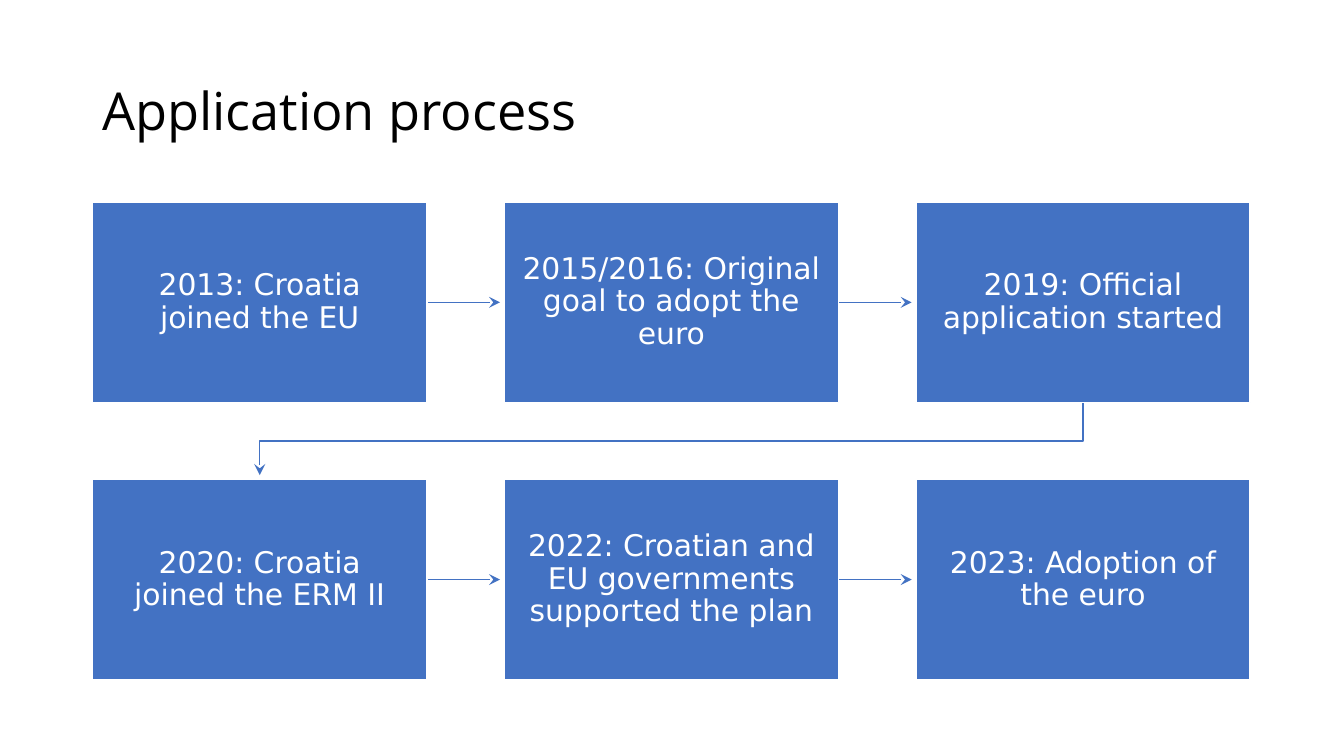
from lxml import etree
from pptx import Presentation
from pptx.dml.color import RGBColor
from pptx.enum.shapes import MSO_CONNECTOR, MSO_SHAPE
from pptx.enum.text import MSO_ANCHOR, PP_ALIGN
from pptx.oxml.ns import qn
from pptx.util import Cm, Pt

RECTANGLE = MSO_SHAPE.RECTANGLE
STRAIGHT = MSO_CONNECTOR.STRAIGHT
MIDDLE = MSO_ANCHOR.MIDDLE
LEFT, CENTER = PP_ALIGN.LEFT, PP_ALIGN.CENTER

# Content
TITLE = "Application process"
STEPS = [
    "2013: Croatia joined the EU",
    "2015/2016: Original goal to adopt the euro",
    "2019: Official application started",
    "2020: Croatia joined the ERM II",
    "2022: Croatian and EU governments supported the plan",
    "2023: Adoption of the euro",
]

# Style and grid
COLORS = {"blue": "4372C3", "white": "FFFFFF", "black": "000000"}
TITLE_FONT, STEP_FONT = "Open Sans", "DejaVu Sans"
COLUMNS = 3
GRID_LEFT, GRID_TOP = Cm(1.75), Cm(3.82)
BOX_WIDTH, BOX_HEIGHT = Cm(6.32), Cm(3.79)
COLUMN_STEP, ROW_STEP = Cm(7.78), Cm(5.24)
ARROW_GAP = Cm(0.08)


def color(name):
    return RGBColor.from_string(COLORS[name])


def box_position(index):
    row, column = divmod(index, COLUMNS)
    return GRID_LEFT + column * COLUMN_STEP, GRID_TOP + row * ROW_STEP


def write_text(shape, text, font, size, color_name, alignment, margins):
    frame = shape.text_frame
    frame.word_wrap = True
    frame.vertical_anchor = MIDDLE
    frame.margin_left = frame.margin_right = margins[0]
    frame.margin_top = frame.margin_bottom = margins[1]
    paragraph = frame.paragraphs[0]
    paragraph.alignment = alignment
    paragraph.line_spacing = 0.9
    run = paragraph.add_run()
    run.text = text
    run.font.name = font
    run.font.size = Pt(size)
    run.font.color.rgb = color(color_name)


def style_arrow(arrow):
    arrow.line.color.rgb = color("blue")
    arrow.line.width = Pt(0.75)
    line = arrow.line._get_or_add_ln()
    etree.SubElement(line, qn("a:tailEnd"), type="stealth")
    etree.SubElement(arrow._element.spPr, qn("a:effectLst"))


def add_row_arrow(slide, index):
    left, top = box_position(index)
    y = top + BOX_HEIGHT // 2
    next_left = box_position(index + 1)[0]
    style_arrow(slide.shapes.add_connector(
        STRAIGHT, left + BOX_WIDTH, y, next_left - ARROW_GAP, y))


def add_turn_arrow(slide, index):
    left, top = box_position(index)
    next_left, next_top = box_position(index + 1)
    start_x, end_x = left + BOX_WIDTH // 2, next_left + BOX_WIDTH // 2
    bottom = top + BOX_HEIGHT
    middle = (bottom + next_top) // 2
    builder = slide.shapes.build_freeform(start_x, bottom)
    builder.add_line_segments(
        [(start_x, middle), (end_x, middle), (end_x, next_top - ARROW_GAP)],
        close=False)
    arrow = builder.convert_to_shape()
    arrow.fill.background()
    style_arrow(arrow)


def add_step(slide, index, text):
    box = slide.shapes.add_shape(
        RECTANGLE, *box_position(index), BOX_WIDTH, BOX_HEIGHT)
    box.shadow.inherit = False
    box.fill.solid()
    box.fill.fore_color.rgb = color("blue")
    box.line.color.rgb = color("white")
    box.line.width = Pt(1)
    write_text(box, text, STEP_FONT, 16, "white", CENTER, (Cm(0.3), Cm(0.3)))


def main():
    presentation = Presentation()
    presentation.slide_width, presentation.slide_height = Cm(25.4), Cm(14.29)
    slide = presentation.slides.add_slide(presentation.slide_layouts[6])

    # Title
    title = slide.shapes.add_textbox(Cm(1.75), Cm(0.76), Cm(21.9), Cm(2.77))
    write_text(title, TITLE, TITLE_FONT, 28, "black", LEFT, (Cm(0.19), Cm(0.1)))

    # Arrows, behind the boxes
    for index in range(len(STEPS) - 1):
        if (index + 1) % COLUMNS:
            add_row_arrow(slide, index)
        else:
            add_turn_arrow(slide, index)

    # Step boxes
    for index, text in enumerate(STEPS):
        add_step(slide, index, text)

    presentation.save("out.pptx")


if __name__ == "__main__":
    main()
